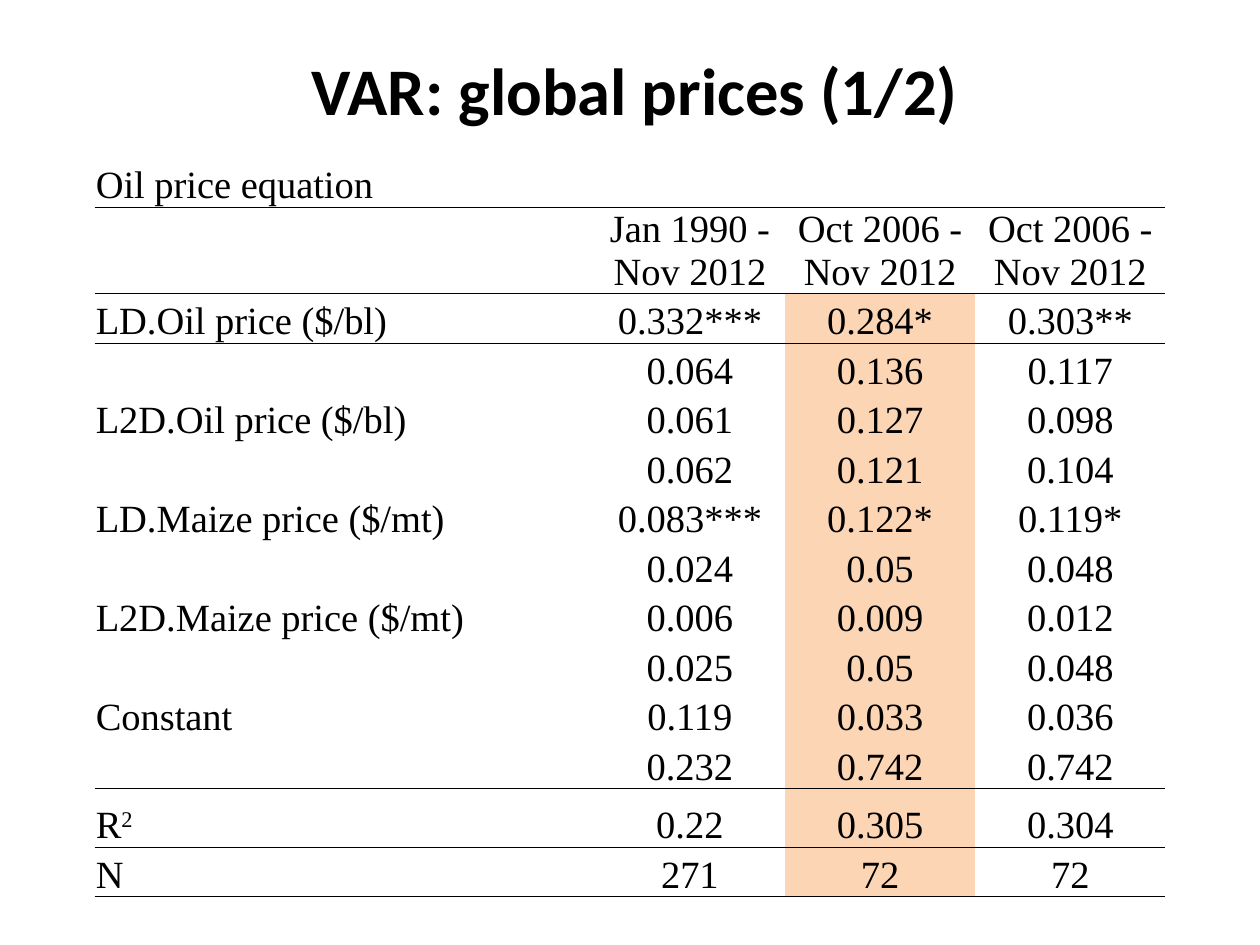
from dataclasses import dataclass

from pptx import Presentation
from pptx.dml.color import RGBColor
from pptx.enum.text import MSO_ANCHOR as Anchor, PP_ALIGN as Align
from pptx.oxml import parse_xml
from pptx.oxml.ns import nsdecls, qn
from pptx.util import Pt


@dataclass(frozen=True)
class Theme:
    """Colours, fonts, sizes and line width of the slide."""
    ink: str = "000000"
    highlight: str = "FCD5B5"
    title_font: str = "Calibri"
    table_font: str = "Times New Roman"
    title_size: float = 38
    table_size: float = 22
    rule_width: float = 0.5


THEME = Theme()
NO_STYLE = "{2D5ABB26-0587-4C30-8999-92F81FD0307C}"
LABEL_WIDTH, VALUE_WIDTH = 285.9, 108.7
ROW_HEIGHT, HEADER_HEIGHT, FIT_HEIGHT = 28.3, 49, 33.5
HIGHLIGHT_COLUMN = 2
HEADER_ROW, FIT_ROW = 1, 12
RULED_ROWS = (0, 1, 11, 13)

ROWS = [
    ("Oil price equation", "", "", ""),
    ("", "Jan 1990 - Nov 2012", "Oct 2006 - Nov 2012", "Oct 2006 - Nov 2012"),
    ("LD.Oil price ($/bl)", "0.332***", "0.284*", "0.303**"),
    ("", "0.064", "0.136", "0.117"),
    ("L2D.Oil price ($/bl)", "0.061", "0.127", "0.098"),
    ("", "0.062", "0.121", "0.104"),
    ("LD.Maize price ($/mt)", "0.083***", "0.122*", "0.119*"),
    ("", "0.024", "0.05", "0.048"),
    ("L2D.Maize price ($/mt)", "0.006", "0.009", "0.012"),
    ("", "0.025", "0.05", "0.048"),
    ("Constant", "0.119", "0.033", "0.036"),
    ("", "0.232", "0.742", "0.742"),
    ("R", "0.22", "0.305", "0.304"),
    ("N", "271", "72", "72"),
]


def add_span(para, text, font, size, bold=False, superscript=False):
    """Add one formatted run to a paragraph."""
    span = para.add_run()
    span.text = text
    span.font.name = font
    span.font.size = Pt(size)
    span.font.bold = bold
    span.font.color.rgb = RGBColor.from_string(THEME.ink)
    if superscript:
        span._r.get_or_add_rPr().set("baseline", "30000")


def add_title(page, text):
    """Place and fill the title placeholder."""
    box = page.shapes.title
    box.left, box.top, box.width, box.height = Pt(48), Pt(12), Pt(630), Pt(78)
    box.text_frame.vertical_anchor = Anchor.MIDDLE
    para = box.text_frame.paragraphs[0]
    para.alignment = Align.CENTER
    add_span(para, text, THEME.title_font, THEME.title_size, bold=True)


def add_rule(cell, side):
    """Draw a thin border on one side of a cell."""
    cell._tc.get_or_add_tcPr().insert(0, parse_xml(
        f'<a:{side} {nsdecls("a")} w="{Pt(THEME.rule_width)}"><a:solidFill>'
        f'<a:srgbClr val="{THEME.ink}"/></a:solidFill></a:{side}>'))


def format_cell(cell, row, column):
    """Set the margins, fill and borders that a cell's position calls for."""
    cell.margin_left = cell.margin_right = cell.margin_top = Pt(0.75)
    cell.margin_bottom = Pt(0)
    cell.vertical_anchor = Anchor.BOTTOM
    if column == HIGHLIGHT_COLUMN and row > HEADER_ROW:
        cell.fill.solid()
        cell.fill.fore_color.rgb = RGBColor.from_string(THEME.highlight)
    else:
        cell.fill.background()
    if row in RULED_ROWS:
        add_rule(cell, "lnB")
    if row - 1 in RULED_ROWS:
        add_rule(cell, "lnT")


def fill_cell(cell, text, row, column):
    """Write a label or a centred value into a cell."""
    para = cell.text_frame.paragraphs[0]
    para.alignment = Align.CENTER if column else Align.LEFT
    if text:
        add_span(para, text, THEME.table_font, THEME.table_size)
    if (row, column) == (FIT_ROW, 0):
        add_span(para, "2", THEME.table_font, THEME.table_size, superscript=True)


def add_results_table(page):
    """Build the regression table."""
    widths = [LABEL_WIDTH] + [VALUE_WIDTH] * 3
    special_heights = {HEADER_ROW: HEADER_HEIGHT, FIT_ROW: FIT_HEIGHT}
    heights = [special_heights.get(row, ROW_HEIGHT) for row in range(len(ROWS))]
    table = page.shapes.add_table(len(heights), len(widths), Pt(54), Pt(90),
                                  Pt(sum(widths)), Pt(sum(heights))).table
    table.first_row = table.horz_banding = False
    table._tbl.tblPr.find(qn("a:tableStyleId")).text = NO_STYLE
    for column, width in zip(table.columns, widths):
        column.width = Pt(width)
    for row, (texts, height) in enumerate(zip(ROWS, heights)):
        table.rows[row].height = Pt(height)
        for column, text in enumerate(texts):
            cell = table.cell(row, column)
            format_cell(cell, row, column)
            fill_cell(cell, text, row, column)
    table.cell(0, 0).merge(table.cell(0, len(widths) - 1))


def main():
    """Build the deck and save it."""
    deck = Presentation()
    deck.slide_width, deck.slide_height = Pt(720), Pt(540)
    page = deck.slides.add_slide(deck.slide_layouts.get_by_name("Title Only"))
    add_title(page, "VAR: global prices (1/2)")
    add_results_table(page)
    deck.save("out.pptx")


if __name__ == "__main__":
    main()
